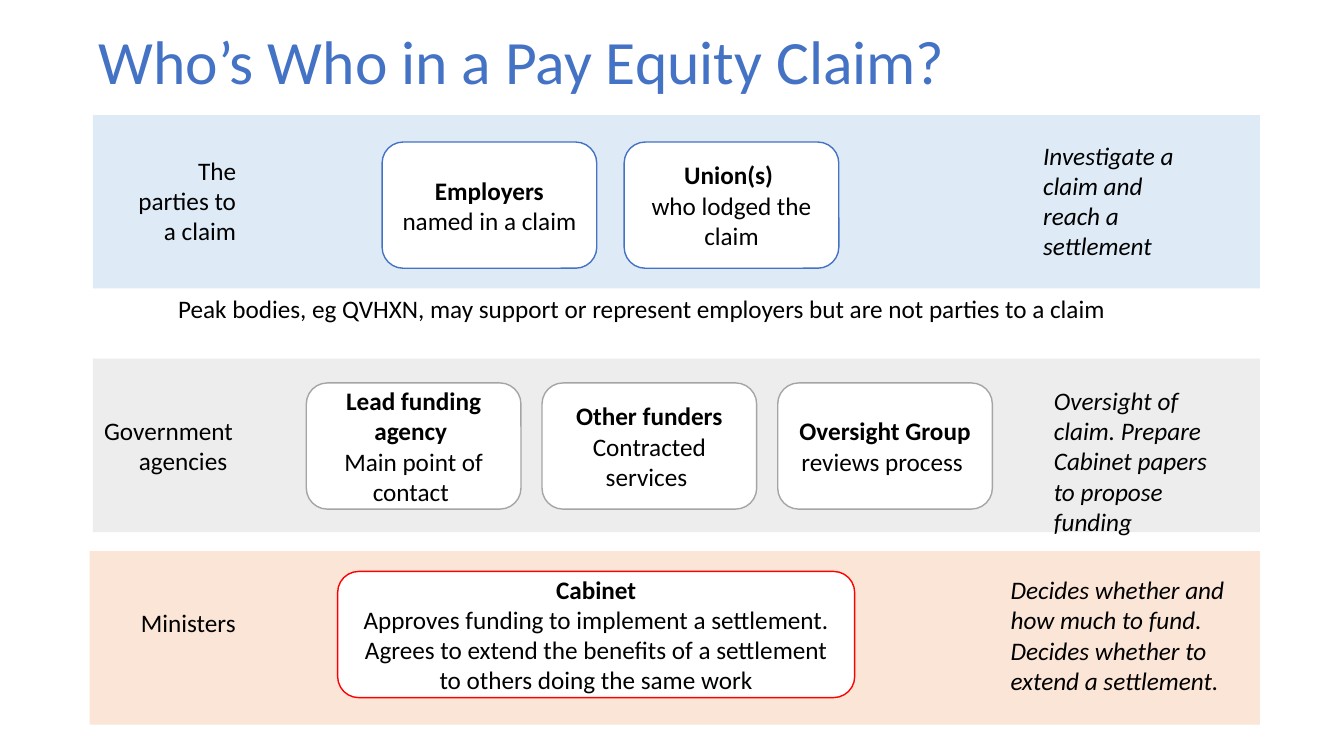
from pptx import Presentation
from pptx.dml.color import RGBColor
from pptx.enum.shapes import MSO_SHAPE as Preset
from pptx.enum.text import MSO_ANCHOR as Anchor, PP_ALIGN as Align
from pptx.util import Cm, Pt

FONT = "Calibri"
COLORS = {
    "title": "4472C4", "text": "000000", "card": "FFFFFF",
    "parties": "DEEBF7", "agencies": "EDEDED", "ministers": "FBE5D6",
    "parties_line": "4472C4", "agencies_line": "A5A5A5", "ministers_line": "FF0000",
}
TITLE = "Who’s Who in a Pay Equity Claim?"
NOTE = "Peak bodies, eg QVHXN, may support or represent employers but are not parties to a claim"

# Boxes are (left, top, width, height) in cm; each card is a heading and its lines.
BANDS = [
    {
        "name": "parties", "box": (2.34, 2.9, 29.41, 4.37),
        "label": "The parties to a claim", "label_box": (3.15, 3.78, 3.05, 2.57),
        "role": ["Investigate a claim and reach a settlement"],
        "role_box": (26.04, 3.4, 4.19, 3.33),
        "cards": [("Employers", "named in a claim"),
                  ("Union(s) ", "who lodged the claim")],
        "first_card": (9.63, 3.58), "card_width": 5.41, "gap": 0.69,
    },
    {
        "name": "agencies", "box": (2.34, 9.04, 29.41, 4.37),
        "label": "Government agencies ", "label_box": (2.34, 10.34, 3.78, 1.8),
        "role": ["Oversight of claim. Prepare Cabinet papers to propose funding"],
        "role_box": (26.31, 9.58, 4.9, 3.33),
        "cards": [("Lead funding agency ", "Main point of contact "),
                  ("Other funders", "Contracted services "),
                  ("Oversight Group", "reviews process ")],
        "first_card": (7.72, 9.65), "card_width": 5.41, "gap": 0.53,
    },
    {
        "name": "ministers", "box": (2.26, 13.89, 29.49, 4.37),
        "label": "Ministers", "label_box": (2.41, 15.19, 3.78, 1.02),
        "role": ["Decides whether and how much to fund.",
                 "Decides whether to extend a settlement."],
        "role_box": (25.22, 14.35, 5.92, 3.33),
        "cards": [("Cabinet", "Approves funding to implement a settlement.",
                   "Agrees to extend the benefits of a settlement to others doing the same work")],
        "first_card": (8.51, 14.4), "card_width": 13.03, "gap": 0,
    },
]
CARD_HEIGHT = 3.18


def rgb(name):
    return RGBColor.from_string(COLORS[name])


def write(frame, lines, size=18, color="text", align=Align.LEFT, anchor=Anchor.TOP,
          italic=False, bold_heading=False, spacing=1.0):
    frame.word_wrap = True
    frame.vertical_anchor = anchor
    for index, line in enumerate(lines):
        paragraph = frame.add_paragraph() if index else frame.paragraphs[0]
        paragraph.alignment = align
        paragraph.line_spacing = spacing
        run = paragraph.add_run()
        run.text = line
        run.font.name = FONT
        run.font.size = Pt(size)
        run.font.bold = bold_heading and index == 0
        run.font.italic = italic
        run.font.color.rgb = rgb(color)


def add_text(slide, box, lines, **style):
    write(slide.shapes.add_textbox(*map(Cm, box)).text_frame, lines, **style)


def add_panel(slide, preset, box, fill, line=None):
    panel = slide.shapes.add_shape(preset, *map(Cm, box))
    panel.shadow.inherit = False
    panel.fill.solid()
    panel.fill.fore_color.rgb = rgb(fill)
    if line:
        panel.line.color.rgb = rgb(line)
        panel.line.width = Pt(1)
    else:
        panel.line.fill.background()
    return panel


def add_band(slide, band):
    name = band["name"]
    add_panel(slide, Preset.RECTANGLE, band["box"], name)
    add_text(slide, band["label_box"], [band["label"]], align=Align.RIGHT)
    left, top = band["first_card"]
    width = band["card_width"]
    for column, lines in enumerate(band["cards"]):
        box = (left + column * (width + band["gap"]), top, width, CARD_HEIGHT)
        card = add_panel(slide, Preset.ROUNDED_RECTANGLE, box, "card", name + "_line")
        write(card.text_frame, lines, align=Align.CENTER, anchor=Anchor.MIDDLE,
              bold_heading=True)
    add_text(slide, band["role_box"], band["role"], italic=True)


def main():
    deck = Presentation()
    deck.slide_width, deck.slide_height = Cm(33.87), Cm(19.05)
    slide = deck.slides.add_slide(deck.slide_layouts[6])
    add_text(slide, (2.24, 0.43, 29.21, 2.41), [TITLE], size=44, color="title",
             anchor=Anchor.MIDDLE, spacing=0.9)
    for band in BANDS:
        add_band(slide, band)
    add_text(slide, (4.24, 7.26, 27.13, 1.02), [NOTE])
    deck.save("out.pptx")


if __name__ == "__main__":
    main()
